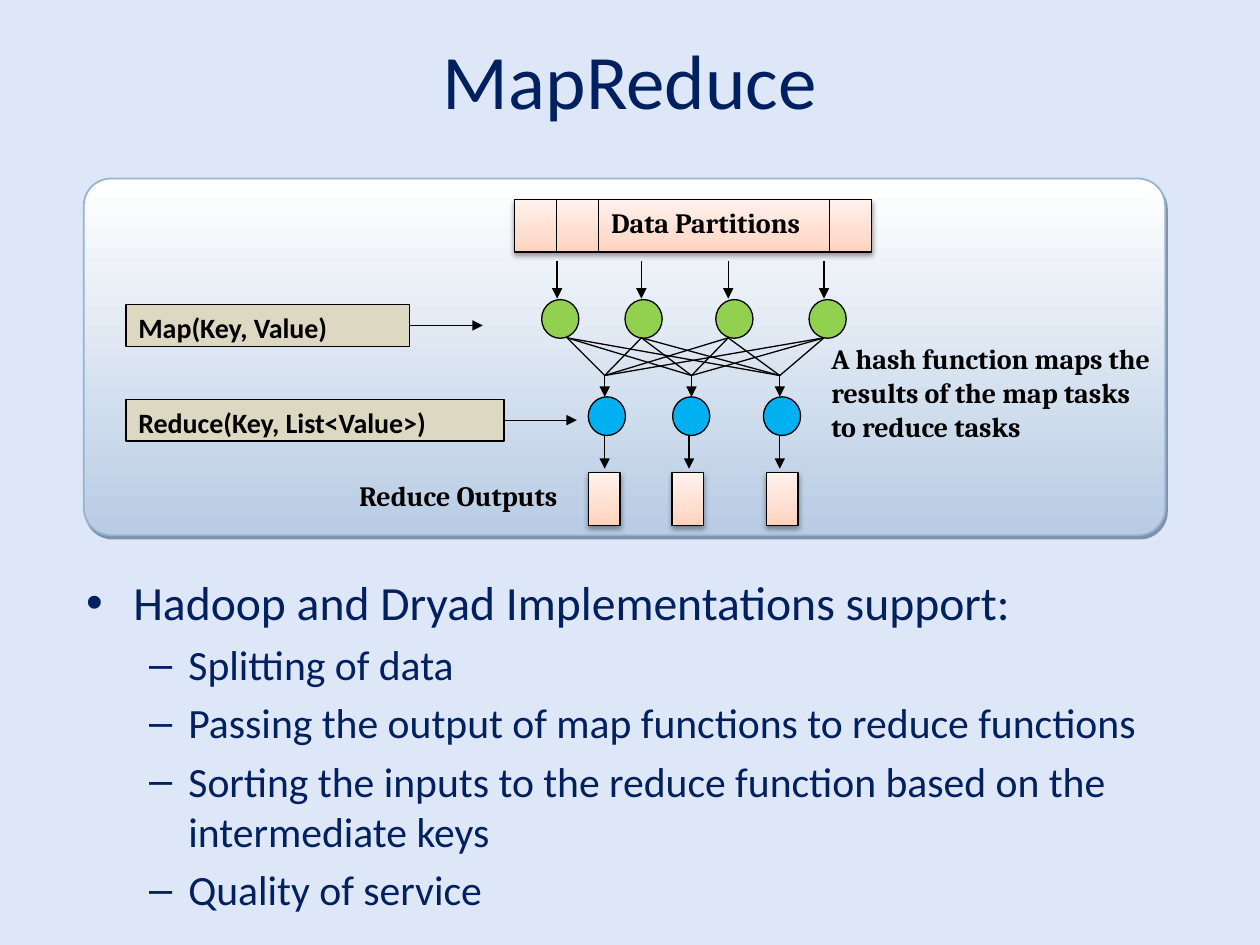
from itertools import product

from lxml.etree import SubElement
from pptx import Presentation
from pptx.dml.color import RGBColor
from pptx.enum.shapes import MSO_CONNECTOR as Link, MSO_SHAPE as Kind
from pptx.enum.text import MSO_ANCHOR as Anchor, MSO_AUTO_SIZE as Auto, PP_ALIGN as Align
from pptx.oxml.ns import qn
from pptx.util import Cm, Pt

INK = "002060"
BLACK = "000000"
PEACH = [(0, "FFD2BD"), (35, "FFDED0"), (100, "FFF2ED")]
SKY = [(0, "FFFFFF"), (100, "B8CCE4")]
SOFT = (BLACK, 38, 3.1, 1.6, 90)
HARD = ("243F60", 50, 0, 2.2, 63)


def color(code):
    return RGBColor.from_string(code)


def style(run, size, face, code, bold=None):
    font = run.font
    font.size, font.name, font.bold = Pt(size), face, bold
    font.color.rgb = color(code)


def node(top, tag, **attrs):
    return SubElement(top, qn(tag), {key: str(val) for key, val in attrs.items()})


def blend(shape, stops, angle):
    props = shape.element.spPr
    grad = node(props, "a:gradFill", rotWithShape=1)
    items = node(grad, "a:gsLst")
    for pos, code in stops:
        node(node(items, "a:gs", pos=pos * 1000), "a:srgbClr", val=code)
    node(grad, "a:lin", ang=angle * 60000, scaled=0)
    props.insert(2, grad)


def shade(shape, code, alpha, blur, dist, angle):
    effects = shape.element.spPr.find(qn("a:effectLst"))
    outer = node(effects, "a:outerShdw", blurRad=Pt(blur), dist=Pt(dist),
                 dir=angle * 60000, algn="tl", rotWithShape=0)
    node(node(outer, "a:srgbClr", val=code), "a:alpha", val=alpha * 1000)


def block(slide, kind, left, top, width, height, fill=None, edge=BLACK, weight=0.75):
    shape = slide.shapes.add_shape(kind, Cm(left), Cm(top), Cm(width), Cm(height))
    shape.shadow.inherit = False
    shape.line.color.rgb = color(edge)
    shape.line.width = Pt(weight)
    if fill:
        shape.fill.solid()
        shape.fill.fore_color.rgb = color(fill)
    return shape


def peach(slide, left, top, width):
    shape = block(slide, Kind.RECTANGLE, left, top, width, 1.06)
    blend(shape, PEACH, 270)
    shade(shape, *SOFT)


def line(slide, x1, y1, x2, y2, arrow=False):
    link = slide.shapes.add_connector(Link.STRAIGHT, Cm(x1), Cm(y1), Cm(x2), Cm(y2))
    link.line.color.rgb = color(BLACK)
    link.line.width = Pt(0.75)
    if arrow:
        node(link.element.spPr.find(qn("a:ln")), "a:tailEnd", type="triangle")
    node(link.element.spPr, "a:effectLst")
    return link


def write(frame, text, face):
    frame.word_wrap = True
    frame.vertical_anchor = Anchor.TOP
    frame.text = text
    para = frame.paragraphs[0]
    para.alignment = Align.LEFT
    style(para.runs[0], 16, face, BLACK, True)


def note(slide, text, left, top, width, height):
    box = slide.shapes.add_textbox(Cm(left), Cm(top), Cm(width), Cm(height))
    write(box.text_frame, text, "Cambria")


def label(slide, text, top, width):
    box = block(slide, Kind.RECTANGLE, 2.54, top, width, 0.84, "DDD8C2")
    write(box.text_frame, text, "Calibri")
    mid = top + 0.42
    link = line(slide, 2.54 + width, mid, 4.01 + width, mid, True)
    link.begin_connect(box, 3)


def place(shape, left, top, width, height):
    shape.left, shape.top, shape.width, shape.height = map(Cm, (left, top, width, height))


def head(slide):
    title = slide.shapes.title
    place(title, 1.27, 0, 22.86, 3.18)
    title.text_frame.text = "MapReduce"
    title.text_frame.vertical_anchor = Anchor.MIDDLE
    style(title.text_frame.paragraphs[0].runs[0], 44, "Calibri", INK)


def points(slide):
    body = slide.placeholders[1]
    place(body, 1.48, 11.43, 22.42, 6.78)
    frame = body.text_frame
    frame.auto_size = Auto.NONE
    frame.text = "\n".join([
        "Hadoop and Dryad Implementations support:",
        "Splitting of data",
        "Passing the output of map functions to reduce functions",
        "Sorting the inputs to the reduce function based on the intermediate keys",
        "Quality of service",
    ])
    for rank, para in enumerate(frame.paragraphs):
        para.level = min(rank, 1)
        style(para.runs[0], 23.8 if rank else 27.2, "Calibri", INK)


def chart(slide):
    panel = block(slide, Kind.ROUNDED_RECTANGLE, 1.69, 3.6, 21.8, 7.19, None, "95B3D7", 1)
    panel.adjustments[0] = 0.076
    blend(panel, SKY, 90)
    shade(panel, *HARD)

    for left in (10.92, 12.6, 14.43, 16.31):
        block(slide, Kind.OVAL, left, 6.04, 0.75, 0.78, "92D050")
    for left in (11.86, 13.56, 15.39):
        block(slide, Kind.OVAL, left, 8, 0.75, 0.78, "00B0F0")

    hubs = (12.19, 13.94, 15.72)
    for start, hub in product((11.43, 12.93, 14.68, 16.61), hubs):
        line(slide, start, 6.81, hub, 7.57)
    for hub in hubs:
        line(slide, hub, 7.57, hub, 8, True)
    for x in (11.23, 12.93, 14.68, 16.61):
        line(slide, x, 5.27, x, 6.02, True)
    for x in (12.19, 13.89, 15.72):
        line(slide, x, 8.79, x, 9.45, True)

    label(slide, "Map(Key, Value)", 6.14, 5.72)
    label(slide, "Reduce(Key, List<Value>)", 8.05, 7.62)

    peach(slide, 10.37, 4.02, 7.2)
    for x in (11.22, 12.07, 16.72):
        line(slide, x, 4.02, x, 5.08)
    for left in (11.86, 13.55, 15.45):
        peach(slide, left, 9.53, 0.64)

    note(slide, "Data Partitions", 12.07, 4.02, 4.45, 1.06)
    note(slide, "Reduce Outputs", 6.99, 9.53, 4.66, 1.06)
    note(slide, "A hash function maps the results of the map tasks to reduce tasks",
         16.51, 6.77, 6.99, 2.96)


def main():
    deck = Presentation()
    deck.slide_width, deck.slide_height = Cm(25.4), Cm(19.05)
    slide = deck.slides.add_slide(deck.slide_layouts[1])
    slide.background.fill.solid()
    slide.background.fill.fore_color.rgb = color("DEE7F8")
    head(slide)
    points(slide)
    chart(slide)
    deck.save("out.pptx")


if __name__ == "__main__":
    main()
